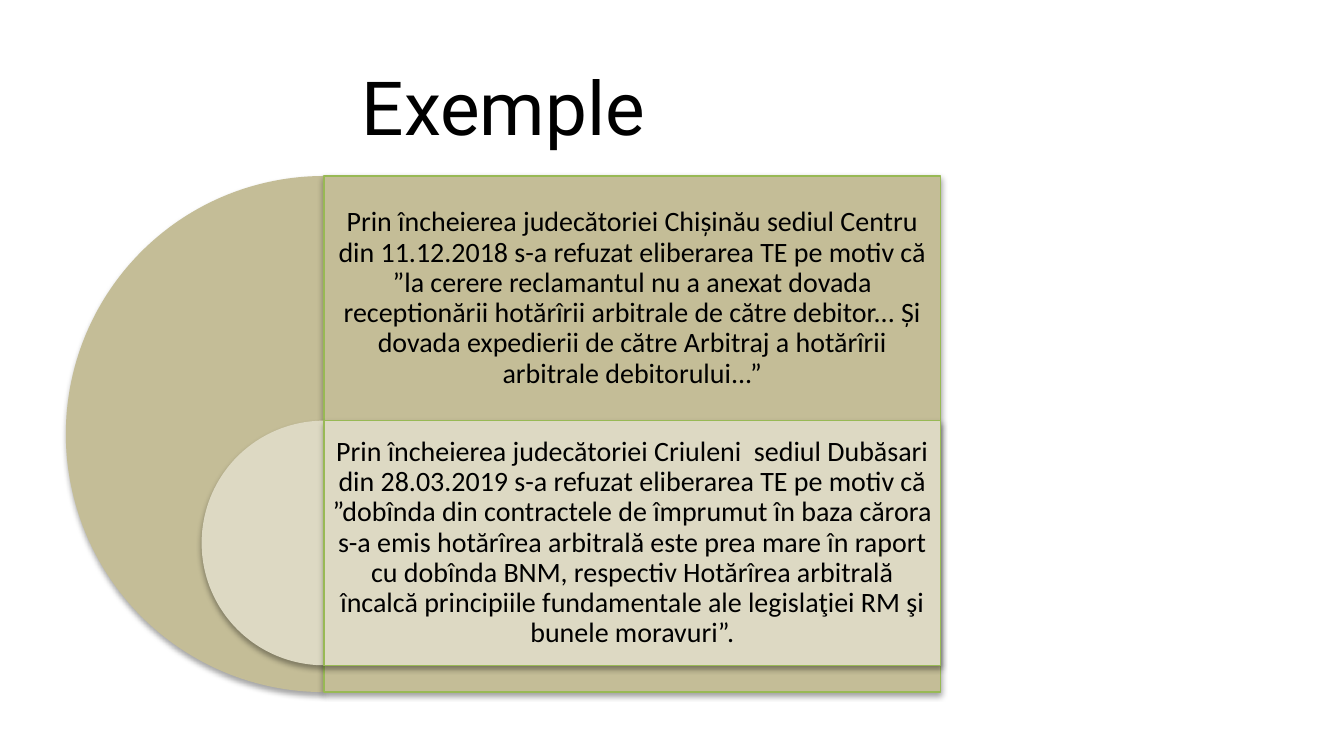
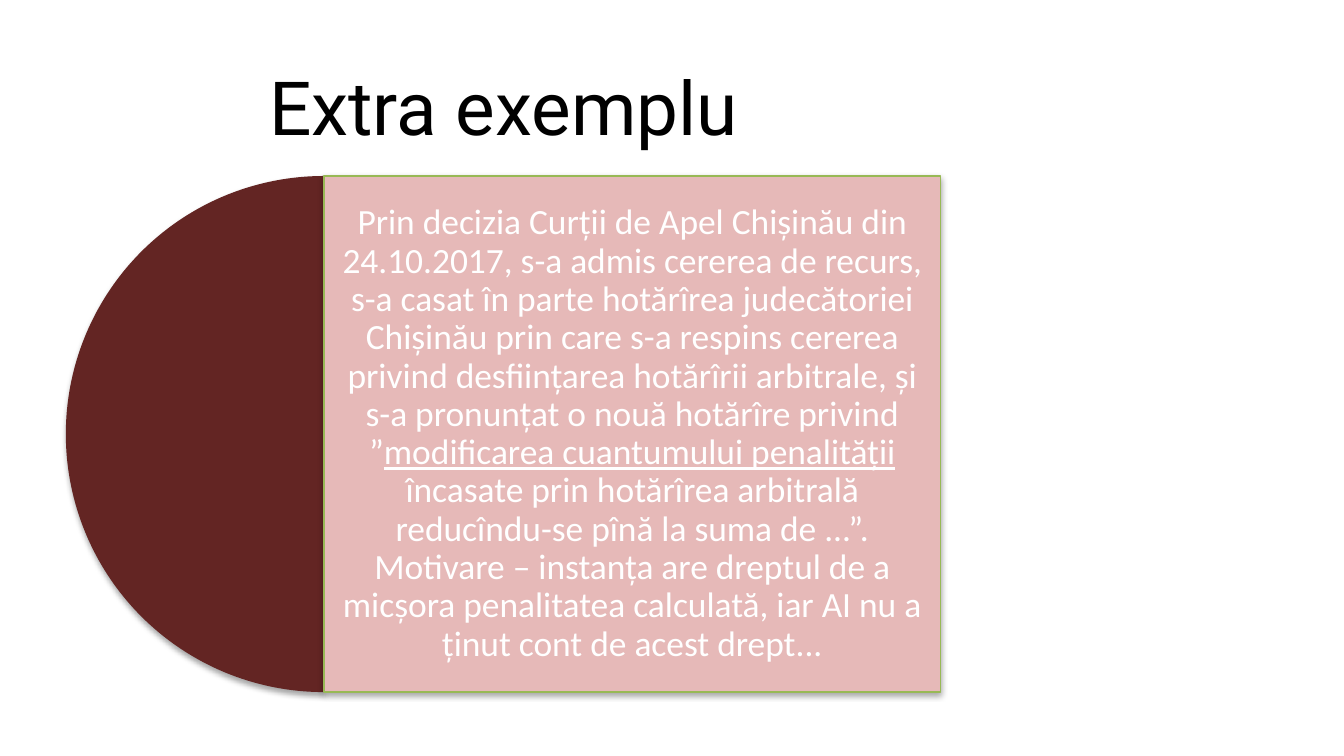
from lxml.etree import SubElement
from pptx import Presentation
from pptx.dml.color import RGBColor
from pptx.enum.shapes import MSO_SHAPE
from pptx.enum.text import MSO_ANCHOR, PP_ALIGN
from pptx.oxml.ns import qn
from pptx.util import Inches, Pt

BLACK = RGBColor(0x00, 0x00, 0x00)
WHITE = RGBColor(0xFF, 0xFF, 0xFF)
TAN = RGBColor(0xC4, 0xBD, 0x97)
SAND = RGBColor(0xDD, 0xD9, 0xC3)
MAROON = RGBColor(0x63, 0x25, 0x23)
ROSE = RGBColor(0xE6, 0xB9, 0xB8)
GREEN = RGBColor(0x98, 0xB9, 0x55)

SLIDE_WIDTH = Inches(10)
SLIDE_HEIGHT = SLIDE_WIDTH * 9 // 16
TITLE_BOX = (0.49, 0.47, 6.51, 0.63)
DIAGRAM_BOX = (0.49, 1.31, 6.51, 3.84)
RULING_HEIGHT = 1.82
SOFT_SHADOW = {"alpha": 35, "distance": 1.8}
FIRM_SHADOW = {"alpha": 38, "distance": 1.6}

TITLE_FONT = {"name": "Roboto", "size": Pt(40)}
RULING_FONT = {"name": "Calibri", "size": Pt(15)}
EXTRA_FONT = {"name": "Calibri", "size": Pt(19)}

RULINGS = [
    "Prin încheierea judecătoriei Chișinău sediul Centru din 11.12.2018 s-a refuzat "
    "eliberarea TE pe motiv că ”la cerere reclamantul nu a anexat dovada receptionării "
    "hotărîrii arbitrale de către debitor... Și dovada expedierii de către Arbitraj a "
    "hotărîrii arbitrale debitorului...”",
    "Prin încheierea judecătoriei Criuleni  sediul Dubăsari din 28.03.2019 s-a refuzat "
    "eliberarea TE pe motiv că ”dobînda din contractele de împrumut în baza cărora s-a "
    "emis hotărîrea arbitrală este prea mare în raport cu dobînda BNM, respectiv "
    "Hotărîrea arbitrală încalcă principiile fundamentale ale legislaţiei RM şi bunele "
    "moravuri”.",
]
EXTRA_RULING = [
    ("Prin decizia Curții de Apel Chișinău din 24.10.2017, s-a admis cererea de recurs, "
     "s-a casat în parte hotărîrea judecătoriei Chișinău prin care s-a respins cererea "
     "privind desființarea hotărîrii arbitrale, și s-a pronunțat o nouă hotărîre privind ”",
     False),
    ("modificarea cuantumului penalității ", True),
    ("încasate prin hotărîrea arbitrală reducîndu-se pînă la suma de ...”. Motivare – "
     "instanța are dreptul de a micșora penalitatea calculată, iar AI nu a ținut cont de "
     "acest drept...", False),
]


def apply_format(target, values):
    """Set every attribute in values on the target."""
    for attribute, value in values.items():
        setattr(target, attribute, value)


def add_text(slide, box, runs, font, color, inset=None, line_spacing=1.0):
    """Write centred (text, underlined) runs in the box."""
    frame = slide.shapes.add_textbox(*map(Inches, box)).text_frame
    apply_format(frame, {"word_wrap": True, "vertical_anchor": MSO_ANCHOR.MIDDLE})
    if inset is not None:
        sides = ("margin_left", "margin_top", "margin_right", "margin_bottom")
        apply_format(frame, dict.fromkeys(sides, Inches(inset)))
    paragraph = frame.paragraphs[0]
    apply_format(paragraph, {"alignment": PP_ALIGN.CENTER, "line_spacing": line_spacing})
    for words, underlined in runs:
        run = paragraph.add_run()
        run.text = words
        apply_format(run.font, font)
        run.font.color.rgb = color
        if underlined:
            run.font.underline = True


def add_shaded(slide, preset, box, fill, shadow):
    """Add a filled shape that casts a shadow straight down."""
    shape = slide.shapes.add_shape(preset, *map(Inches, box))
    shape.fill.solid()
    shape.fill.fore_color.rgb = fill
    shape.line.fill.background()
    shape.shadow.inherit = False
    effects = shape._element.spPr.find(qn("a:effectLst"))
    outer = SubElement(effects, qn("a:outerShdw"), blurRad=str(Pt(3.1)),
                       dist=str(Pt(shadow["distance"])), dir="5400000", rotWithShape="0")
    tint = SubElement(outer, qn("a:srgbClr"), val=str(BLACK))
    SubElement(tint, qn("a:alpha"), val=str(shadow["alpha"] * 1000))
    return shape


def add_half_disc_panel(slide, box, disc_fill, panel_fill, panel_shadow):
    """Add a panel in the box with a half disc of its height on its left edge."""
    left, top, width, height = box
    disc = add_shaded(slide, MSO_SHAPE.PIE, (left - height / 2, top, height, height),
                      disc_fill, SOFT_SHADOW)
    disc.adjustments[0], disc.adjustments[1] = 54, 162
    panel = add_shaded(slide, MSO_SHAPE.RECTANGLE, box, panel_fill, panel_shadow)
    panel.line.color.rgb = GREEN
    panel.line.width = Pt(0.75)


def panel_box(diagram):
    """Return the part of the diagram to the right of the half disc."""
    left, top, width, height = diagram
    return left + height / 2, top, width - height / 2, height


def add_titled_slide(deck, title):
    """Add a blank slide with the shared title."""
    slide = deck.slides.add_slide(deck.slide_layouts[6])
    add_text(slide, TITLE_BOX, [(title, False)], TITLE_FONT, BLACK)
    return slide


def build_examples(deck):
    """Build the slide with two nested rulings."""
    slide = add_titled_slide(deck, "Exemple")
    left, top, width, height = panel_box(DIAGRAM_BOX)
    for index, (ruling, fill) in enumerate(zip(RULINGS, (TAN, SAND))):
        ruling_top = top + index * RULING_HEIGHT
        panel_height = RULING_HEIGHT if index else height
        add_half_disc_panel(slide, (left, ruling_top, width, panel_height),
                            fill, fill, FIRM_SHADOW)
        add_text(slide, (left, ruling_top, width, RULING_HEIGHT), [(ruling, False)],
                 RULING_FONT, BLACK, 0.06, 0.9)


def build_extra_example(deck):
    """Build the slide with one ruling."""
    slide = add_titled_slide(deck, "Extra exemplu")
    box = panel_box(DIAGRAM_BOX)
    add_half_disc_panel(slide, box, MAROON, ROSE, SOFT_SHADOW)
    add_text(slide, box, EXTRA_RULING, EXTRA_FONT, WHITE, 0.08, 0.9)


def main():
    """Build and save the deck."""
    deck = Presentation()
    apply_format(deck, {"slide_width": SLIDE_WIDTH, "slide_height": SLIDE_HEIGHT})
    build_examples(deck)
    build_extra_example(deck)
    deck.save("out.pptx")


if __name__ == "__main__":
    main()
